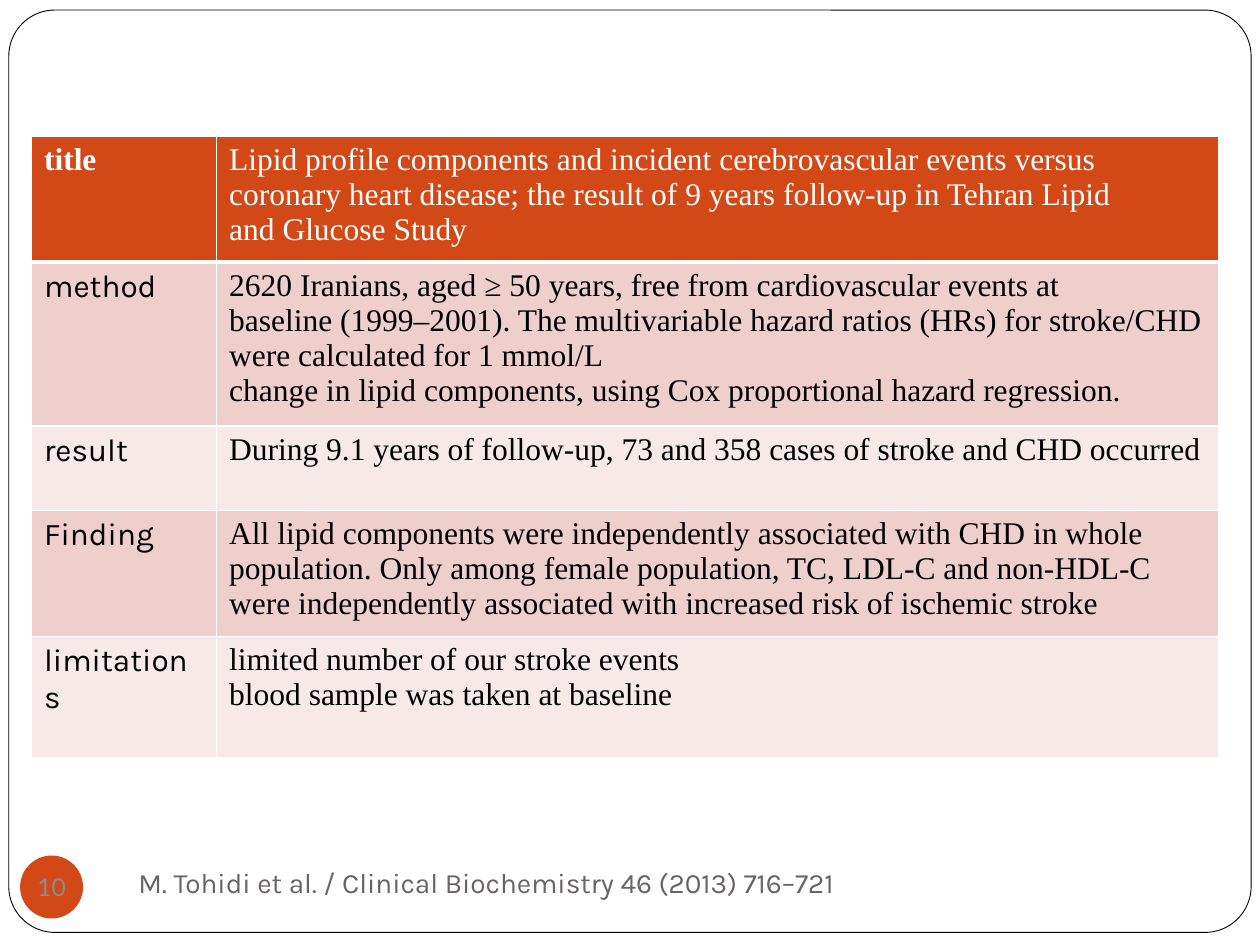
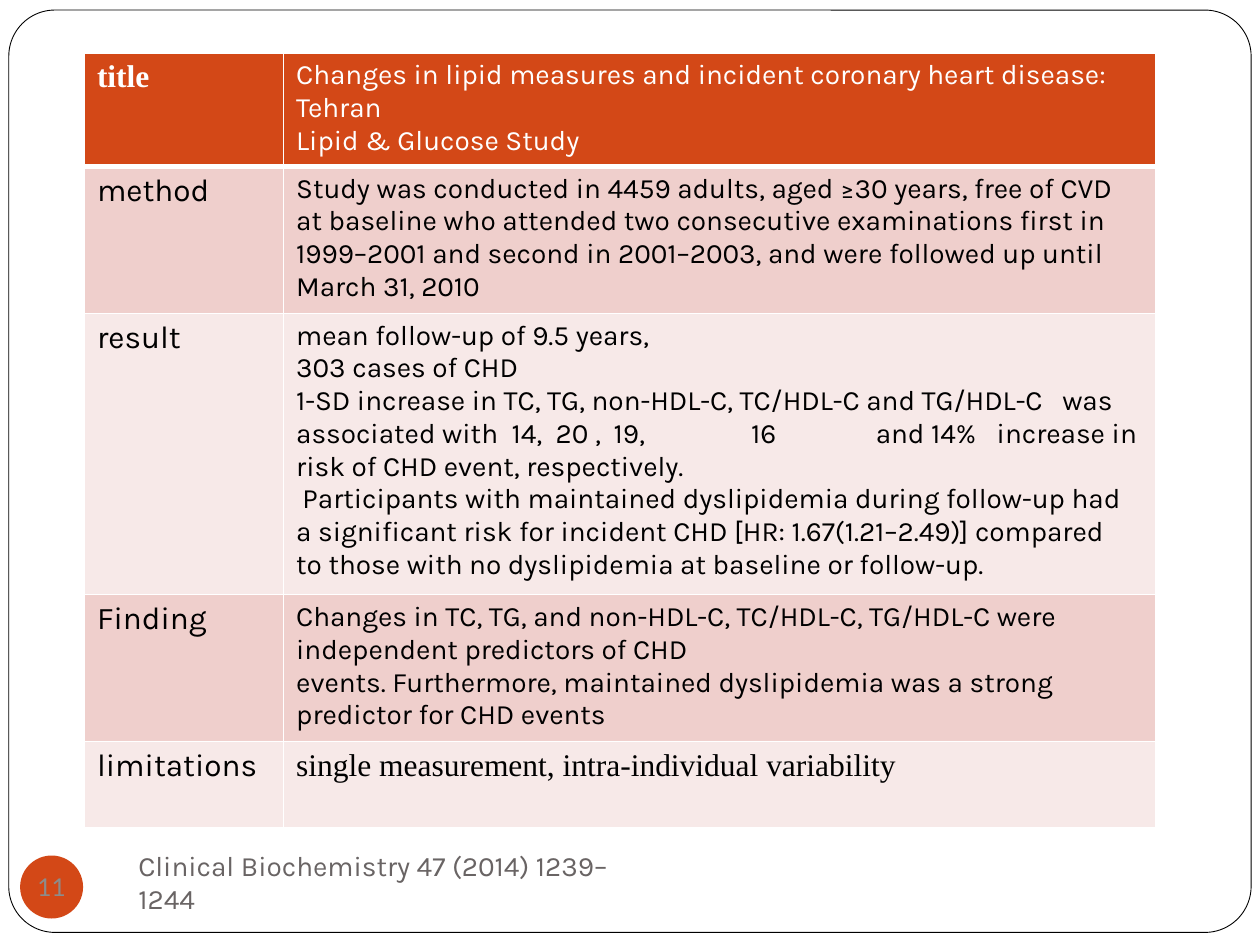
from lxml import etree
from pptx import Presentation
from pptx.dml.color import RGBColor
from pptx.enum.shapes import MSO_SHAPE as SHAPE
from pptx.enum.text import MSO_ANCHOR as ANCHOR, PP_ALIGN as ALIGN
from pptx.oxml.ns import qn
from pptx.util import Inches, Pt

COLORS = {
    "paper": "FFFFFF", "ink": "000000", "accent": "D34817",
    "band_dark": "EFCFCC", "band_light": "F7E9E8",
    "citation": "696464", "number": "8C8C8C",
}
SANS, SERIF, NUMERAL = "Karla", "Times New Roman", "Lato"
SLIDE_W, SLIDE_H = 10, 7.5
LABELS = ["title", "method", "result", "Finding", "limitations"]

# Tab stops, in inches, that line the percentages up in the second study
PERCENT_TABS = [1.71, 2.06, 2.52, 3.61, 4.6, 5.56, 6.08]

STUDIES = [
    {
        "number": "10",
        "citation": "M. Tohidi et al. / Clinical Biochemistry 46 (2013) 716–721",
        "citation_width": 7.42,
        "box": (0.25, 1.08, 9.42, 4.69),
        "label_share": 0.156,
        "row_heights": [0.92, 1.21, 0.67, 0.93, 0.96],
        "fonts": [(SERIF, 18)] * 5,
        "texts": [
            ["Lipid profile components and incident cerebrovascular events versus",
             "coronary heart disease; the result of 9 years follow-up in Tehran Lipid",
             "and Glucose Study"],
            ["2620 Iranians, aged ≥ 50 years, free from cardiovascular events at",
             "baseline (1999–2001). The multivariable hazard ratios (HRs) for "
             "stroke/CHD were calculated for 1 mmol/L",
             "change in lipid components, using Cox proportional hazard regression."],
            ["During 9.1 years of follow-up, 73 and 358 cases of stroke and CHD occurred"],
            ["All lipid components were independently associated with CHD in whole "
             "population. Only among female population, TC, LDL-C and non-HDL-C were "
             "independently associated with increased risk of ischemic stroke"],
            ["limited number of our stroke events",
             "blood sample was taken at baseline"],
        ],
    },
    {
        "number": "11",
        "citation": "Clinical Biochemistry 47 (2014) 1239–1244",
        "citation_width": 4.33,
        "box": (0.67, 0.42, 8.5, 6),
        "label_share": 0.186,
        "row_heights": [0.87, 1.14, 2.18, 1.13, 0.68],
        "fonts": [(SANS, 16)] * 4 + [(SERIF, 18)],
        "texts": [
            ["Changes in lipid measures and incident coronary heart disease: Tehran",
             "Lipid & Glucose Study"],
            ["Study was conducted in 4459 adults, aged ≥30 years, free of CVD at "
             "baseline who attended two consecutive examinations first in 1999–2001 "
             "and second in 2001–2003, and were followed up until March 31, 2010"],
            ["mean follow-up of 9.5 years,",
             "303 cases of CHD",
             "1-SD increase in TC, TG, non-HDL-C, TC/HDL-C and TG/HDL-C\twas "
             "associated with\t14,\t20 ,\t19,\t16\tand 14%\tincrease in risk of "
             "CHD event, respectively.",
             "Participants with maintained dyslipidemia during follow-up had a "
             "significant risk for incident CHD [HR: 1.67(1.21–2.49)] compared",
             "to those with no dyslipidemia at baseline or follow-up."],
            ["Changes in TC, TG, and non-HDL-C, TC/HDL-C, TG/HDL-C were independent "
             "predictors of CHD",
             "events. Furthermore, maintained dyslipidemia was a strong predictor "
             "for CHD events"],
            ["single measurement, intra-individual variability"],
        ],
    },
]


def rgb(name):
    return RGBColor.from_string(COLORS[name])


def place(left, top, width, height):
    return [Inches(v) for v in (left, top, width, height)]


def write(tf, lines, font, size, color, bold=False, align=ALIGN.LEFT):
    tf.text = "\n".join(lines)
    for p in tf.paragraphs:
        p.alignment = align
        for r in p.runs:
            r.font.name, r.font.size, r.font.bold = font, Pt(size), bold
            r.font.color.rgb = rgb(color)


def set_tabs(p, stops):
    tabs = etree.SubElement(p._p.get_or_add_pPr(), qn("a:tabLst"))
    for stop in stops:
        etree.SubElement(tabs, qn("a:tab"), pos=str(Inches(stop)), algn="l")


def set_borders(cell, **widths):
    tc_pr = cell._tc.get_or_add_tcPr()
    for side in ("L", "R", "T", "B"):
        width = Pt(widths.get(side, 1))
        ln = etree.SubElement(tc_pr, qn("a:ln" + side), w=str(width))
        fill = etree.SubElement(ln, qn("a:solidFill"))
        etree.SubElement(fill, qn("a:srgbClr"), val=COLORS["paper"])


def add_plain_shape(slide, kind, box, fill, line=None):
    sp = slide.shapes.add_shape(kind, *place(*box))
    sp.shadow.inherit = False
    sp.fill.solid()
    sp.fill.fore_color.rgb = rgb(fill)
    if line:
        sp.line.color.rgb = rgb(line)
        sp.line.width = Pt(0.5)
    else:
        sp.line.fill.background()
    return sp


def add_frame(slide):
    margin = 0.07
    box = (margin, 0.08, SLIDE_W - 2 * margin, SLIDE_H - 0.1)
    box = (*box[:3], 7.32)
    sp = add_plain_shape(slide, SHAPE.ROUNDED_RECTANGLE, box, "paper", "ink")
    sp.adjustments[0] = 0.05


def add_footer(slide, box, study):
    left, top, height = box
    # Citation
    sp = slide.shapes.add_textbox(
        *place(left + 0.84, top, study["citation_width"], height))
    tf = sp.text_frame
    tf.word_wrap = True
    tf.vertical_anchor = ANCHOR.MIDDLE
    write(tf, [study["citation"]], SANS, 16, "citation")
    # Slide number badge
    badge = (left, top + 0.04, height, height)
    tf = add_plain_shape(slide, SHAPE.OVAL, badge, "accent").text_frame
    tf.margin_left = tf.margin_right = tf.margin_top = tf.margin_bottom = 0
    tf.word_wrap = False
    tf.vertical_anchor = ANCHOR.MIDDLE
    write(tf, [study["number"]], NUMERAL, 14, "number", align=ALIGN.CENTER)


def add_study_table(slide, box, study):
    table = slide.shapes.add_table(len(LABELS), 2, *place(*box)).table
    label_width = box[2] * study["label_share"]
    for column, width in zip(table.columns, (label_width, box[2] - label_width)):
        column.width = Inches(width)
    rows = zip(LABELS, study["texts"], study["fonts"], study["row_heights"])
    for i, (label, lines, (font, size), height) in enumerate(rows):
        table.rows[i].height = Inches(height)
        header = i == 0
        color = "paper" if header else "ink"
        band = "accent" if header else ("band_light", "band_dark")[i % 2]
        label_cell, text_cell = table.cell(i, 0), table.cell(i, 1)
        # The rule under the header row is heavier
        for cell in (label_cell, text_cell):
            set_borders(cell, T=3 if i == 1 else 1, B=3 if header else 1)
            cell.fill.solid()
            cell.fill.fore_color.rgb = rgb(band)
        write(label_cell.text_frame, [label], SERIF if header else SANS, 18,
              color, bold=header)
        write(text_cell.text_frame, lines, font, size, color)
        for p in text_cell.text_frame.paragraphs:
            if "\t" in p.text:
                set_tabs(p, PERCENT_TABS)
            elif p.text.startswith("Participants"):
                p._p.get_or_add_pPr().set("indent", str(Inches(0.05)))


def add_study_slide(prs, study):
    slide = prs.slides.add_slide(prs.slide_layouts[6])
    add_frame(slide)
    add_footer(slide, (0.16, 6.75, 0.5), study)
    add_study_table(slide, study["box"], study)


def main():
    prs = Presentation()
    prs.slide_width, prs.slide_height = Inches(SLIDE_W), Inches(SLIDE_H)
    for study in STUDIES:
        add_study_slide(prs, study)
    prs.save("out.pptx")


if __name__ == "__main__":
    main()
